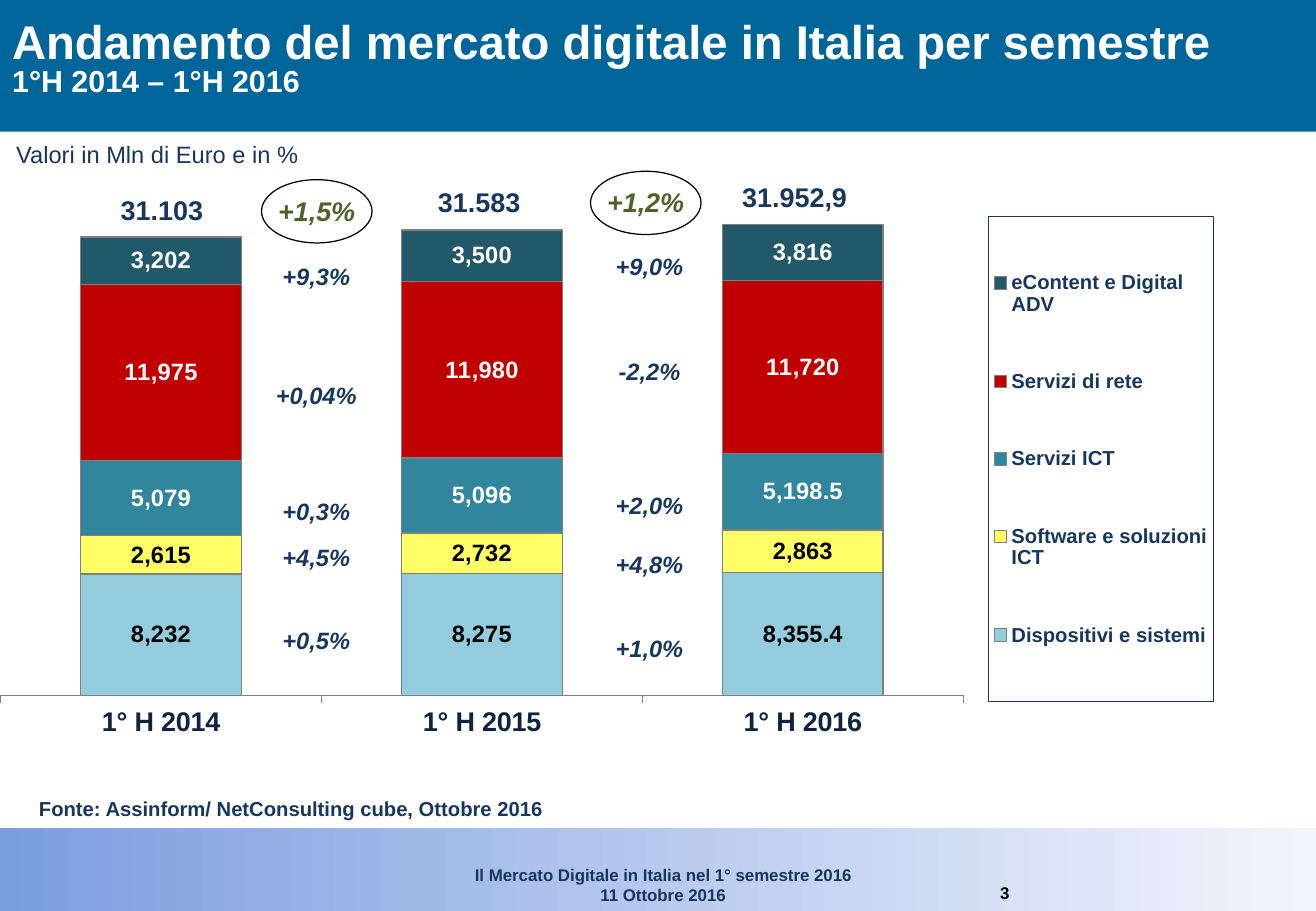
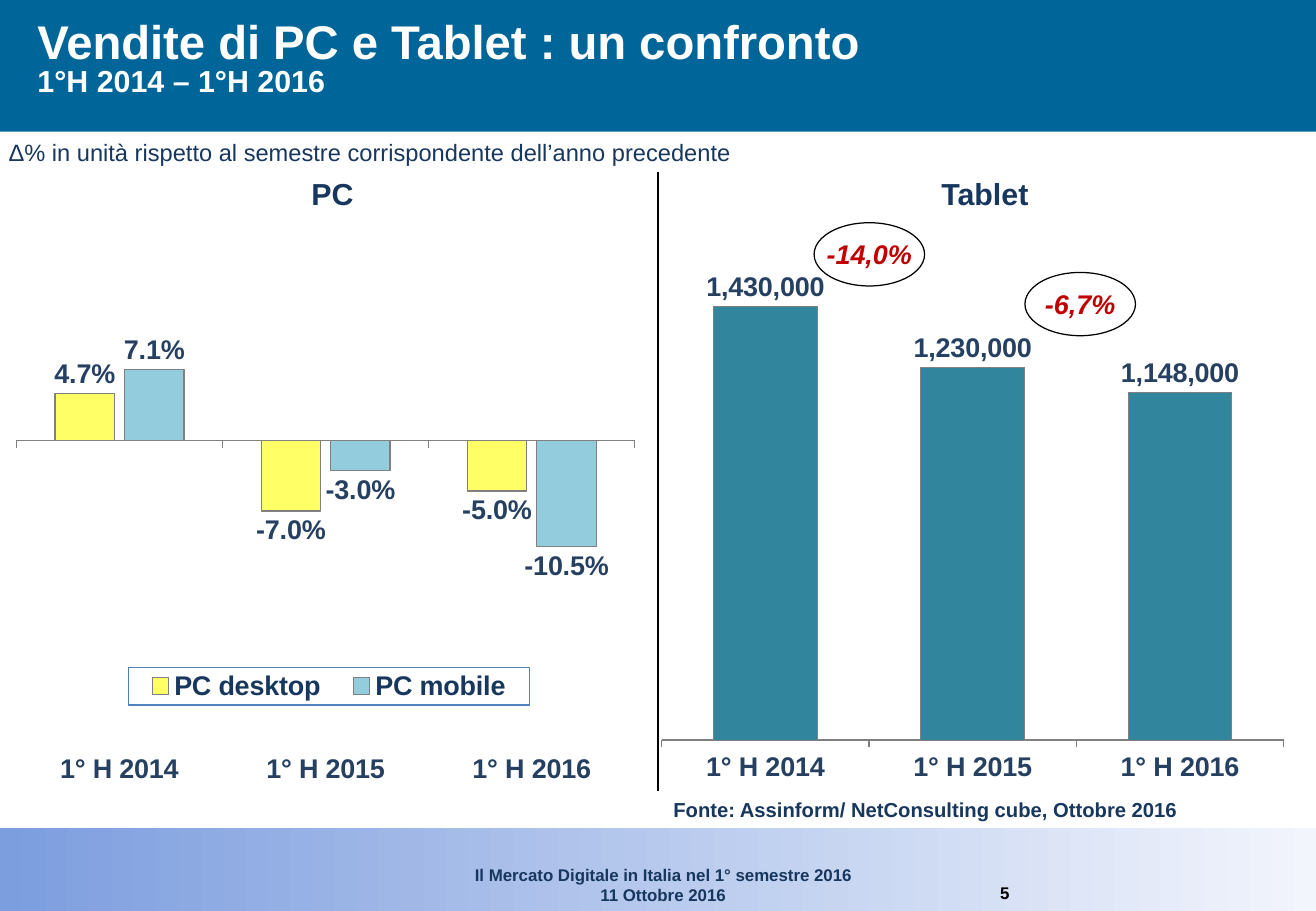
"""Build two slides on the Italian digital market, half year by half year."""
from dataclasses import dataclass
from typing import Optional

from lxml import etree
import pptx
import pptx.chart.data
import pptx.dml.color
import pptx.enum.chart
import pptx.enum.dml
import pptx.enum.shapes
import pptx.enum.text
import pptx.oxml.ns
import pptx.util

Pt = pptx.util.Pt
RGBColor = pptx.dml.color.RGBColor
Shape = pptx.enum.shapes.MSO_SHAPE
Align = pptx.enum.text.PP_ALIGN
ChartType = pptx.enum.chart.XL_CHART_TYPE
LabelPosition = pptx.enum.chart.XL_LABEL_POSITION
LegendPosition = pptx.enum.chart.XL_LEGEND_POSITION
TickMark = pptx.enum.chart.XL_TICK_MARK
qn = pptx.oxml.ns.qn

FONT = "Arial"
WHITE = RGBColor(0xFF, 0xFF, 0xFF)
BLACK = RGBColor(0x00, 0x00, 0x00)
BAND_BLUE = RGBColor(0x00, 0x66, 0x99)
FOOTER_START = RGBColor(0x7C, 0x9D, 0xDE)
FOOTER_END = RGBColor(0xF2, 0xF5, 0xFC)
NAVY = RGBColor(0x17, 0x37, 0x5E)
AXIS_NAVY = RGBColor(0x0F, 0x24, 0x3E)
LABEL_NAVY = RGBColor(0x25, 0x40, 0x61)
LEGEND_BLUE = RGBColor(0x4F, 0x81, 0xBD)
GRAY = RGBColor(0x80, 0x80, 0x80)
GREEN = RGBColor(0x4F, 0x62, 0x28)
RED = RGBColor(0xC0, 0x00, 0x00)
TEAL = RGBColor(0x31, 0x85, 0x9C)
DARK_TEAL = RGBColor(0x21, 0x59, 0x68)
LIGHT_BLUE = RGBColor(0x93, 0xCD, 0xDD)
YELLOW = RGBColor(0xFF, 0xFF, 0x66)

WIDTH, HEIGHT = 780, 540
PERIOD = "1°H 2014 – 1°H 2016"
SOURCE = "Fonte: Assinform/ NetConsulting cube, Ottobre 2016"
HALF_YEARS = ("1° H 2014", "1° H 2015", "1° H 2016")
BADGE_SIZE = (65.5, 37.5)
BADGE_TEXT_WIDTH = 80

Box = tuple[float, float, float, float]


@dataclass(frozen=True)
class Series:
    """One chart series with its fill and label format."""
    name: str
    values: tuple[float, ...]
    color: RGBColor
    label_color: RGBColor = LABEL_NAVY
    number_format: str = "#,##0"


@dataclass(frozen=True)
class Legend:
    """Legend place within the chart, as fractions, and its style."""
    position: LegendPosition
    layout: Box
    size: float
    border: RGBColor


@dataclass(frozen=True)
class ColumnChart:
    """A column chart with hidden value axis."""
    kind: ChartType
    box: Box
    plot: Box
    series: tuple[Series, ...]
    scale: tuple[float, float]
    gap: int
    overlap: int
    label_size: float
    label_position: LabelPosition
    axis_color: RGBColor = LABEL_NAVY
    line_width: float = 0.75
    legend: Optional[Legend] = None


@dataclass(frozen=True)
class Badge:
    """A circled growth rate."""
    text: str
    left: float
    top: float
    color: RGBColor


@dataclass(frozen=True)
class GrowthColumn:
    """Growth rates stacked between two bars, as (text, top) pairs."""
    center: float
    rates: tuple[tuple[str, float], ...]


MARKET_CHART = ColumnChart(
    ChartType.COLUMN_STACKED, (0, 106.5, 741.5, 364), (0, 0, 0.77, 0.84),
    (Series("Dispositivi e sistemi", (8232, 8275, 8355.4), LIGHT_BLUE, BLACK,
            "[=8355.4]#,##0.0;#,##0"),
     Series("Software e soluzioni ICT", (2615, 2732, 2863), YELLOW, BLACK),
     Series("Servizi ICT", (5079, 5096, 5198.5), TEAL, WHITE,
            "[=5198.5]#,##0.0;#,##0"),
     Series("Servizi di rete", (11975, 11980, 11720), RED, WHITE),
     Series("eContent e Digital ADV", (3202, 3500, 3816), DARK_TEAL, WHITE)),
    (0, 35000), 100, 100, 14, LabelPosition.CENTER, AXIS_NAVY,
    legend=Legend(LegendPosition.RIGHT, (0.79, 0.06, 0.18, 0.79), 12, NAVY))

TABLET_CHART = ColumnChart(
    ChartType.COLUMN_CLUSTERED, (384.5, 108, 388, 359.5), (0.02, 0.07, 0.95, 0.85),
    (Series("Tablet", (1430000, 1230000, 1148000), TEAL),),
    (0, 1700000), 100, 100, 16, LabelPosition.OUTSIDE_END, line_width=0.5)

PC_CHART = ColumnChart(
    ChartType.COLUMN_CLUSTERED, (-2, 160.5, 390, 373), (0.03, 0.03, 0.94, 0.72),
    (Series("PC desktop", (0.047, -0.07, -0.05), YELLOW, number_format="0.0%"),
     Series("PC mobile", (0.071, -0.03, -0.105), LIGHT_BLUE, number_format="0.0%")),
    (-0.3, 0.15), 130, -17, 16, LabelPosition.OUTSIDE_END,
    legend=Legend(LegendPosition.BOTTOM, (0.2, 0.63, 0.61, 0.06), 16, LEGEND_BLUE))

TOTALS = (("31.103", 96, 111), ("31.583", 284, 106.5), ("31.952,9", 471, 103.5))
GROWTH = (
    GrowthColumn(187.5, (("+9,3%", 150.5), ("+0,04%", 221), ("+0,3%", 289.5),
                         ("+4,5%", 317), ("+0,5%", 366))),
    GrowthColumn(385, (("+9,0%", 144.5), ("-2,2%", 206.5), ("+2,0%", 286),
                       ("+4,8%", 321), ("+1,0%", 371))))
MARKET_BADGES = (Badge("+1,5%", 155, 106.5, GREEN), Badge("+1,2%", 350, 101.5, GREEN))
TABLET_BADGES = (Badge("-14,0%", 482.5, 132, RED), Badge("-6,7%", 607.5, 161.5, RED))


def set_font(font, size: float, color: RGBColor, bold=True, italic=False) -> None:
    """Format a font in the deck's typeface."""
    font.name, font.size, font.bold, font.italic = FONT, Pt(size), bold, italic
    font.color.rgb = color


def add_text(slide, box: Box, text: str, *, size: float, color: RGBColor = NAVY, bold=True,
             italic=False, align=Align.LEFT, wrap=False, preset: Optional[Shape] = None):
    """Add text in a plain box, or in an unfilled preset shape."""
    place = [Pt(length) for length in box]
    if preset is None:
        shape = slide.shapes.add_textbox(*place)
    else:
        shape = add_outline(slide, preset, box)
    frame = shape.text_frame
    frame.word_wrap = wrap
    frame.auto_size = pptx.enum.text.MSO_AUTO_SIZE.SHAPE_TO_FIT_TEXT
    frame.text = text
    for paragraph in frame.paragraphs:
        paragraph.alignment = align
        set_font(paragraph.runs[0].font, size, color, bold, italic)
    return shape


def add_outline(slide, preset: Shape, box: Box, line: Optional[RGBColor] = None):
    """Add an unfilled, shadowless shape, with a thin line if a colour is given."""
    shape = slide.shapes.add_shape(preset, *[Pt(length) for length in box])
    shape.shadow.inherit = False
    shape.fill.background()
    if line is None:
        shape.line.fill.background()
    else:
        shape.line.color.rgb, shape.line.width = line, Pt(0.75)
    return shape


def add_badge(slide, badge: Badge) -> None:
    """Add a growth rate inside an ellipse."""
    width, height = BADGE_SIZE
    text_left = badge.left + (width - BADGE_TEXT_WIDTH) / 2
    add_text(slide, (text_left, badge.top + 3.5, BADGE_TEXT_WIDTH, 29.5), badge.text,
             size=16, color=badge.color, italic=True, align=Align.CENTER,
             preset=Shape.ROUNDED_RECTANGLE)
    add_outline(slide, Shape.OVAL, (badge.left, badge.top, width, height), BLACK)


def set_layout(parent, index: int, layout: Box, inner=False) -> None:
    """Place a plot area or legend by fractions of the chart."""
    for old in parent.findall(qn("c:layout")):
        parent.remove(old)
    holder = etree.Element(qn("c:layout"))
    manual = etree.SubElement(holder, qn("c:manualLayout"))
    settings = [("layoutTarget", "inner")] if inner else []
    settings += [("xMode", "edge"), ("yMode", "edge"), *zip("xywh", map(str, layout))]
    for tag, value in settings:
        etree.SubElement(manual, qn(f"c:{tag}"), val=value)
    parent.insert(index, holder)


def add_legend(chart, style: Legend) -> None:
    """Add a bordered legend at a fixed place."""
    chart.has_legend = True
    chart.legend.position = style.position
    chart.legend.include_in_layout = False
    set_font(chart.legend.font, style.size, NAVY)
    legend = chart.element.find(".//" + qn("c:legend"))
    set_layout(legend, 1, style.layout)
    properties = etree.Element(qn("c:spPr"))
    line = etree.SubElement(properties, qn("a:ln"), w=str(Pt(0.75)))
    fill = etree.SubElement(line, qn("a:solidFill"))
    etree.SubElement(fill, qn("a:srgbClr"), val=str(style.border))
    legend.find(qn("c:txPr")).addprevious(properties)


def add_column_chart(slide, model: ColumnChart) -> None:
    """Add a column chart over the three half years."""
    data = pptx.chart.data.CategoryChartData()
    data.categories = HALF_YEARS
    for series in model.series:
        data.add_series(series.name, series.values)
    place = [Pt(length) for length in model.box]
    chart = slide.shapes.add_chart(model.kind, *place, data).chart
    chart.has_title = chart.has_legend = False
    set_font(chart.font, 18, BLACK, bold=False)

    value_axis, category_axis = chart.value_axis, chart.category_axis
    value_axis.minimum_scale, value_axis.maximum_scale = model.scale
    value_axis.has_major_gridlines = value_axis.visible = False
    category_axis.major_tick_mark = TickMark.OUTSIDE
    category_axis.minor_tick_mark = TickMark.NONE
    category_axis.tick_label_position = pptx.enum.chart.XL_TICK_LABEL_POSITION.LOW
    category_axis.format.line.color.rgb = GRAY
    set_font(category_axis.tick_labels.font, 16, model.axis_color)

    plot = chart.plots[0]
    plot.gap_width, plot.overlap, plot.vary_by_categories = model.gap, model.overlap, False
    for bars, series in zip(plot.series, model.series):
        bars.invert_if_negative = False
        bars.format.fill.solid()
        bars.format.fill.fore_color.rgb = series.color
        bars.format.line.color.rgb = GRAY
        bars.format.line.width = Pt(model.line_width)
        labels = bars.data_labels
        labels.show_value, labels.position = True, model.label_position
        labels.number_format, labels.number_format_is_linked = series.number_format, False
        set_font(labels.font, model.label_size, series.label_color)

    set_layout(chart.element.find(".//" + qn("c:plotArea")), 0, model.plot, inner=True)
    background = etree.Element(qn("c:spPr"))
    etree.SubElement(background, qn("a:noFill"))
    chart.element.find(qn("c:chart")).addnext(background)
    if model.legend:
        add_legend(chart, model.legend)


def move_frame_to_layout(slide) -> None:
    """Draw the bands and footer once and keep them on the slide's layout."""
    title_band = add_outline(slide, Shape.RECTANGLE, (0, 0, WIDTH, 78))
    title_band.fill.solid()
    title_band.fill.fore_color.rgb = BAND_BLUE
    footer_band = add_outline(slide, Shape.RECTANGLE, (0, 491, WIDTH, 49))
    footer_band.fill.gradient()
    footer_band.fill.gradient_angle = 0
    for stop, color, position in zip(footer_band.fill.gradient_stops,
                                     (FOOTER_START, FOOTER_END), (0, 1)):
        stop.color.rgb, stop.position = color, position
    footer = add_text(slide, (175, 509, 436, 31.5),
                      "Il Mercato Digitale in Italia nel 1° semestre 2016\n11 Ottobre 2016",
                      size=10, align=Align.CENTER, wrap=True)
    title, *unused = slide.slide_layout.placeholders
    tree = title.element.getparent()
    for placeholder in unused:
        tree.remove(placeholder.element)
    for index, part in enumerate((title_band, footer_band, footer), start=2):
        tree.insert(index, part.element)


def add_heading(slide, title: str, left: float, number: str) -> None:
    """Fill the title placeholder and add the page number."""
    heading = slide.shapes.title
    heading.left, heading.top = Pt(left), Pt(0)
    heading.width, heading.height = Pt(WIDTH - left), Pt(72)
    frame = heading.text_frame
    frame.auto_size = pptx.enum.text.MSO_AUTO_SIZE.NONE
    frame.vertical_anchor = pptx.enum.text.MSO_ANCHOR.MIDDLE
    paragraph = frame.paragraphs[0]
    paragraph.alignment, paragraph.line_spacing = Align.LEFT, 0.8
    for text, size in ((title, 28), (PERIOD, 18)):
        if paragraph.runs:
            paragraph.add_line_break()
        run = paragraph.add_run()
        run.text = text
        set_font(run.font, size, WHITE)
    add_text(slide, (574, 519.5, 43, 19.5), number, size=10, color=BLACK,
             align=Align.CENTER, wrap=True)


def fill_market_slide(slide) -> None:
    """Show the market by segment with growth rates."""
    add_heading(slide, "Andamento del mercato digitale in Italia per semestre", 0, "3")
    add_column_chart(slide, MARKET_CHART)
    add_text(slide, (2.5, 79.5, 183, 24.5), "Valori in Mln di Euro e in %", size=14, bold=False)
    add_text(slide, (16, 468.5, 317, 21.5), SOURCE, size=12)
    for total, center, top in TOTALS:
        add_text(slide, (center - 38.5, top, 77, 26.5), total, size=16, align=Align.CENTER)
    for column in GROWTH:
        for rate, top in column.rates:
            add_text(slide, (column.center - 36, top, 72, 26.5), rate, size=14, italic=True,
                     align=Align.CENTER, preset=Shape.ROUNDED_RECTANGLE)
    for badge in MARKET_BADGES:
        add_badge(slide, badge)


def fill_sales_slide(slide) -> None:
    """Compare PC and tablet sales side by side."""
    add_heading(slide, "Vendite di PC e Tablet : un confronto", 15, "5")
    add_column_chart(slide, TABLET_CHART)
    add_column_chart(slide, PC_CHART)
    divider = slide.shapes.add_connector(pptx.enum.shapes.MSO_CONNECTOR.STRAIGHT,
                                         Pt(390), Pt(102), Pt(390), Pt(469))
    divider.line.color.rgb, divider.line.width = BLACK, Pt(0.75)
    etree.SubElement(divider.element.find(qn("p:spPr")), qn("a:effectLst"))
    add_text(slide, (392, 469, 315, 21.5), SOURCE, size=12)
    add_text(slide, (-2, 78.5, 443.5, 24.5),
             "Δ% in unità rispetto al semestre corrispondente dell’anno precedente",
             size=14, bold=False)
    for product, left, width in (("PC", 44, 306), ("Tablet", 425, 317.5)):
        add_text(slide, (left, 100, width, 29), product, size=18, align=Align.CENTER, wrap=True)
    for badge in TABLET_BADGES:
        add_badge(slide, badge)


def main() -> None:
    """Build and save the deck."""
    deck = pptx.Presentation()
    deck.slide_width, deck.slide_height = Pt(WIDTH), Pt(HEIGHT)
    title_only = deck.slide_layouts[5]
    market, sales = (deck.slides.add_slide(title_only) for _ in range(2))
    move_frame_to_layout(market)
    fill_market_slide(market)
    fill_sales_slide(sales)
    deck.save("out.pptx")


if __name__ == "__main__":
    main()
